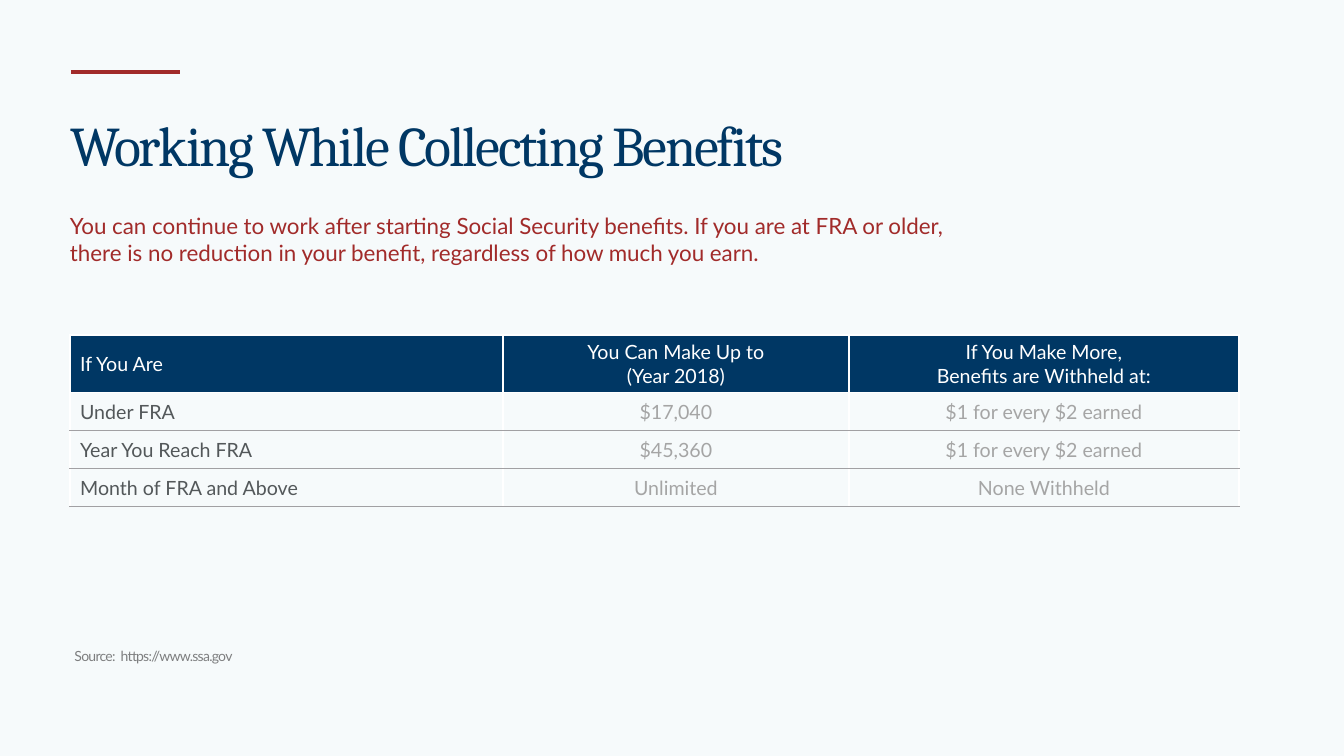
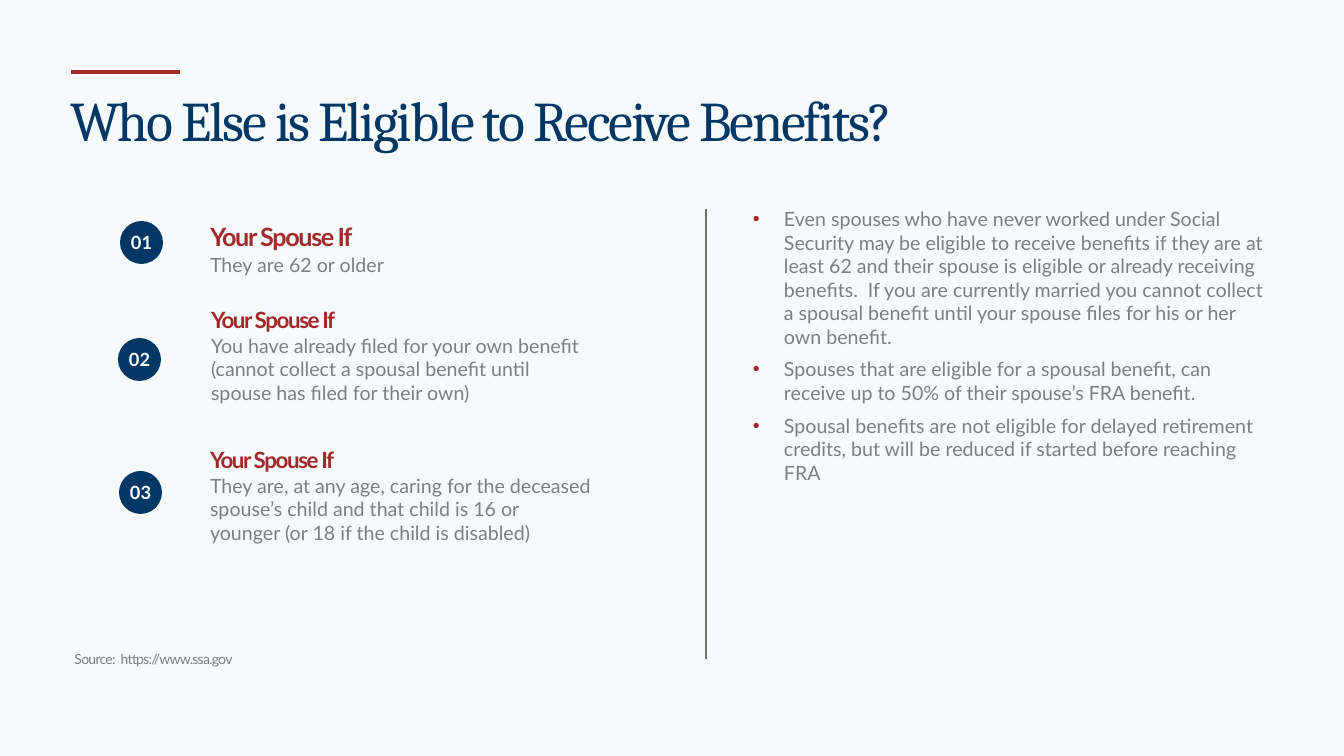
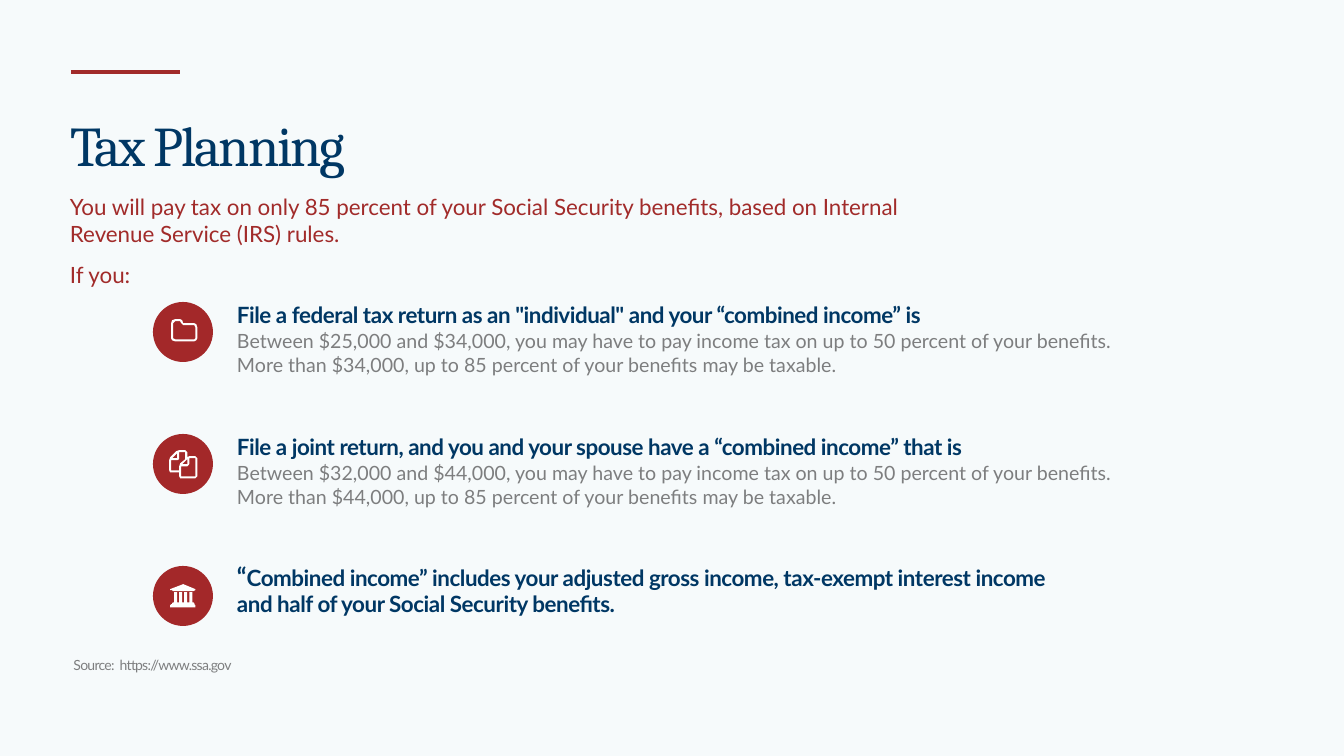
from lxml import etree
from pptx import Presentation
from pptx.dml.color import RGBColor
from pptx.enum.shapes import MSO_CONNECTOR, MSO_SHAPE
from pptx.enum.text import MSO_ANCHOR, MSO_AUTO_SIZE, PP_ALIGN
from pptx.oxml.ns import qn
from pptx.util import Pt

PX = 12192000 / 1344
ICON_UNIT = 9144
STRAIGHT = MSO_CONNECTOR.STRAIGHT
OVAL = MSO_SHAPE.OVAL
TOP, MIDDLE = MSO_ANCHOR.TOP, MSO_ANCHOR.MIDDLE
LEFT, CENTER = PP_ALIGN.LEFT, PP_ALIGN.CENTER
NO_AUTOFIT = MSO_AUTO_SIZE.NONE

PALE = RGBColor(0xF6, 0xFA, 0xFB)
NAVY = RGBColor(0x00, 0x37, 0x64)
CRIMSON = RGBColor(0xA1, 0x2B, 0x2A)
RED = RGBColor(0xA3, 0x28, 0x29)
WHITE = RGBColor(0xFF, 0xFF, 0xFF)
GRAY = RGBColor(0x7D, 0x7E, 0x7F)
DARK_GRAY = RGBColor(0x53, 0x58, 0x5A)
LIGHT_GRAY = RGBColor(0xA5, 0xA5, 0xA5)
BORDER_GRAY = RGBColor(0xA1, 0xA0, 0xA3)
DIVIDER_GRAY = RGBColor(0x70, 0x72, 0x71)

TITLE = dict(size=40, color=NAVY, tracking=-150, name="Cambria")
SOURCE = dict(size=10, color=GRAY, tracking=-50, align=CENTER)
INTRO = dict(size=16, color=CRIMSON, before=10)
BODY = dict(size=14, color=GRAY, after=0.5)
BULLET = dict(size=14, color=GRAY, after=6.5)
BADGE = dict(size=13, color=WHITE, bold=True, tracking=20, align=CENTER)
HEADING = dict(size=16, bold=True, after=0.5, line=18.4)
SPOUSE_HEADING = dict(HEADING, color=RED, tracking=-100)
TAX_HEADING = dict(HEADING, color=NAVY, tracking=-30)


def style_paragraph(paragraph, size, color, name="Lato", bold=False, tracking=0,
                    align=LEFT, before=0, after=0, line=None):
    paragraph.alignment = align
    paragraph.space_before = Pt(before)
    paragraph.space_after = Pt(after)
    paragraph.line_spacing = Pt(line) if line else 1.0
    font = paragraph.font
    font.name, font.size, font.bold = name, Pt(size), bold
    font.color.rgb = color
    paragraph._p.pPr.find(qn("a:defRPr")).set("spc", str(tracking))


def fill_text(shape, entries, wrap=True, anchor=TOP):
    frame = shape.text_frame
    frame.auto_size = NO_AUTOFIT
    frame.word_wrap = wrap
    frame.vertical_anchor = anchor
    frame.margin_left = frame.margin_top = frame.margin_right = frame.margin_bottom = 0
    frame.text = "\n".join(text for text, style in entries)
    for paragraph, (text, style) in zip(frame.paragraphs, entries):
        style_paragraph(paragraph, **style)
    return frame.paragraphs


presentation = Presentation()
presentation.slide_width = round(1344 * PX)
presentation.slide_height = round(756 * PX)
background = presentation.slide_master.background.fill
background.solid()
background.fore_color.rgb = PALE

slides = []
lines = []
texts = []
for title, title_top, title_width, source_left, source_top in [
    ("Working While Collecting Benefits", 111, 1073, 70, 648),
    ("Who Else is Eligible to Receive Benefits?", 86, 1220, 70, 651),
    ("Tax Planning", 111, 1073, 69, 657),
]:
    slide = presentation.slides.add_slide(presentation.slide_layouts[5])
    slides.append(slide)
    lines.append((slide, 71, 72, 180, 72, CRIMSON, 2.25))
    placeholder = slide.shapes.title
    placeholder.left, placeholder.top = round(70 * PX), round(title_top * PX)
    placeholder.width, placeholder.height = round(title_width * PX), round(67 * PX)
    fill_text(placeholder, [(title, TITLE)])
    source = slide.shapes.add_textbox(
        *(round(value * PX) for value in (source_left, source_top, 167, 17)))
    fill_text(source, [("Source:  https://www.ssa.gov", SOURCE)], wrap=False)

benefits_slide, spouse_slide, tax_slide = slides

lines.append((spouse_slide, 706, 209, 706, 659, DIVIDER_GRAY, 0.75))
for slide, left, top, right, bottom, color, weight in lines:
    connector = slide.shapes.add_connector(
        STRAIGHT, *(round(value * PX) for value in (left, top, right, bottom)))
    connector.line.color.rgb = color
    connector.line.width = Pt(weight)
    etree.SubElement(connector._element.spPr, qn("a:effectLst"))

rows = [
    ("If You Are", "You Can Make Up to\n(Year 2018)", "If You Make More,\nBenefits are Withheld at:"),
    ("Under FRA", "$17,040", "$1 for every $2 earned"),
    ("Year You Reach FRA", "$45,360", "$1 for every $2 earned"),
    ("Month of FRA and Above", "Unlimited", "None Withheld"),
]
column_widths = [433, 346, 390]
row_heights = [58, 38, 38, 38]
table = benefits_slide.shapes.add_table(
    len(rows), len(column_widths),
    *(round(value * PX) for value in (70, 335, sum(column_widths), sum(row_heights)))).table
table.first_row = table.horz_banding = False
for column, width in zip(table.columns, column_widths):
    column.width = round(width * PX)
for row_index, (row, height) in enumerate(zip(rows, row_heights)):
    table.rows[row_index].height = round(height * PX)
    for column_index, text in enumerate(row):
        cell = table.cell(row_index, column_index)
        cell.text = text
        cell.vertical_anchor = MIDDLE
        if row_index == 0:
            cell.fill.solid()
            cell.fill.fore_color.rgb = NAVY
            color = WHITE
        else:
            cell.fill.background()
            color = LIGHT_GRAY if column_index else DARK_GRAY
        for paragraph in cell.text_frame.paragraphs:
            style_paragraph(paragraph, 14, color, align=CENTER if column_index else LEFT)
        top_color = BORDER_GRAY if row_index > 1 else WHITE
        bottom_color = BORDER_GRAY if row_index else WHITE
        properties = cell._tc.get_or_add_tcPr()
        for position, (side, border_color, weight) in enumerate([
            ("L", WHITE, 1), ("R", WHITE, 1), ("T", top_color, 0.86), ("B", bottom_color, 0.86),
        ]):
            border = etree.Element(qn("a:ln" + side), w=str(Pt(weight)))
            border_fill = etree.SubElement(border, qn("a:solidFill"))
            etree.SubElement(border_fill, qn("a:srgbClr"), val=str(border_color))
            properties.insert(position, border)

texts.append((benefits_slide, 70, 212, 888, 37, [
    ("You can continue to work after starting Social Security benefits. If you are at FRA or older, "
     "there is no reduction in your benefit, regardless of how much you earn.", INTRO)]))
texts.append((tax_slide, 70, 193, 888, 37, [
    ("You will pay tax on only 85 percent of your Social Security benefits, based on Internal "
     "Revenue Service (IRS) rules.", INTRO),
    ("If you:", INTRO)]))

circles = []
for number, badge_left, badge_top, text_left, text_top, text_height, heading, condition in [
    ("01", 120, 221, 210, 226, 50, dict(SPOUSE_HEADING, size=18, color=CRIMSON),
     "They are 62 or older"),
    ("02", 118, 338, 211, 307, 98, SPOUSE_HEADING,
     "You have already filed for your own benefit (cannot collect a spousal benefit until "
     "spouse has filed for their own)"),
    ("03", 119, 471, 210, 447, 98, SPOUSE_HEADING,
     "They are, at any age, caring for the deceased spouse’s child and that child is 16 or "
     "younger (or 18 if the child is disabled)"),
]:
    circles.append((spouse_slide, badge_left, badge_top, 43, NAVY, number, []))
    texts.append((spouse_slide, text_left, text_top, 381, text_height, [
        ("Your Spouse If", heading), (condition, BODY)]))

folder = [
    [(44, 25), (44, 36), (43, 38), (41, 39), (22, 39), (19, 38), (18, 36), (18, 21), (19, 18),
     (22, 17), (27, 17), (29, 18), (30, 21), (41, 21), (43, 22)],
    [(42, 36), (42, 25), (41, 23), (30, 23), (28, 21), (27, 19), (22, 19), (20, 21), (20, 36),
     (22, 37), (41, 37)],
]
documents = [
    [(42, 22), (44, 24), (44, 42), (42, 44), (27, 44), (26, 42), (26, 38), (17, 38), (16, 36),
     (16, 26), (17, 23), (23, 17), (26, 16), (32, 16), (34, 18), (34, 23), (36, 22)],
    [(27, 29), (32, 25), (32, 18), (26, 18), (26, 25), (24, 26), (18, 26), (18, 36), (26, 36), (26, 32)],
    [(24, 19), (19, 24), (24, 24)],
    [(42, 42), (42, 24), (36, 24), (36, 30), (34, 32), (28, 32), (28, 42)],
    [(34, 25), (29, 30), (34, 30)],
]
columns = [point for left in (21, 26, 31, 36)
           for point in ((left, 36), (left, 26), (left + 3, 26), (left + 3, 36))]
bank = [
    [(30, 18), (42, 23), (42, 24), (40, 25), (20, 25), (19, 24), (17, 24), (17, 23)],
    [(41, 38), (42, 39), (42, 41), (17, 41), (17, 39), (18, 38)],
    columns + [(40, 36), (41, 37), (41, 38), (19, 38), (19, 37), (20, 36)],
]
for index, (icon, width, height, entries) in enumerate([
    (folder, 978, 76, [
        ("File a federal tax return as an \"individual\" and your “combined income” is", TAX_HEADING),
        ("Between $25,000 and $34,000, you may have to pay income tax on up to 50 percent of your benefits.", BODY),
        ("More than $34,000, up to 85 percent of your benefits may be taxable.", BODY)]),
    (documents, 1040, 76, [
        ("File a joint return, and you and your spouse have a “combined income” that is", TAX_HEADING),
        ("Between $32,000 and $44,000, you may have to pay income tax on up to 50 percent of your benefits.", BODY),
        ("More than $44,000, up to 85 percent of your benefits may be taxable.", BODY)]),
    (bank, 835, 50, [("“", TAX_HEADING)]),
]):
    top = 302 + index * 132
    circles.append((tax_slide, 153, top, 60, RED, "", icon))
    texts.append((tax_slide, 237, top, width, height, entries))

texts.append((spouse_slide, 753, 207, 513, 281, [
    ("Even spouses who have never worked under Social Security may be eligible to receive benefits "
     "if they are at least 62 and their spouse is eligible or already receiving benefits.  If you are "
     "currently married you cannot collect a spousal benefit until your spouse files for his or her "
     "own benefit.", BULLET),
    ("Spouses that are eligible for a spousal benefit, can receive up to 50% of their spouse’s FRA "
     "benefit.", BULLET),
    ("Spousal benefits are not eligible for delayed retirement credits, but will be reduced if "
     "started before reaching FRA", BULLET)]))

for slide, left, top, diameter, color, label, icon in circles:
    circle = slide.shapes.add_shape(
        OVAL, *(round(value * PX) for value in (left, top, diameter, diameter)))
    circle.shadow.inherit = False
    circle.fill.solid()
    circle.fill.fore_color.rgb = color
    circle.line.fill.background()
    if label:
        fill_text(circle, [(label, BADGE)], wrap=False, anchor=MIDDLE)
    if icon:
        builder = slide.shapes.build_freeform(*icon[0][0], scale=ICON_UNIT)
        for contour in icon:
            builder.move_to(*contour[0])
            builder.add_line_segments(contour[1:], close=True)
        drawing = builder.convert_to_shape(circle.left, circle.top)
        drawing.shadow.inherit = False
        drawing.fill.solid()
        drawing.fill.fore_color.rgb = WHITE
        drawing.line.fill.background()

for slide, left, top, width, height, entries in texts:
    box = slide.shapes.add_textbox(*(round(value * PX) for value in (left, top, width, height)))
    paragraphs = fill_text(box, entries)
    for paragraph, (text, style) in zip(paragraphs, entries):
        if style is BULLET:
            properties = paragraph._p.pPr
            indent = round(31 * PX)
            properties.set("marL", str(indent))
            properties.set("indent", str(-indent))
            bullet_color = etree.Element(qn("a:buClr"))
            etree.SubElement(bullet_color, qn("a:srgbClr"), val=str(RED))
            default_font = properties.find(qn("a:defRPr"))
            default_font.addprevious(bullet_color)
            default_font.addprevious(etree.Element(qn("a:buFont"), typeface="Arial"))
            default_font.addprevious(etree.Element(qn("a:buChar"), char="•"))
        if text == "“":
            paragraph.runs[0].font.size = Pt(18)
            paragraph.add_run().text = (
                "Combined income” includes your adjusted gross income, tax-exempt interest income "
                "and half of your Social Security benefits.")

presentation.save("out.pptx")
